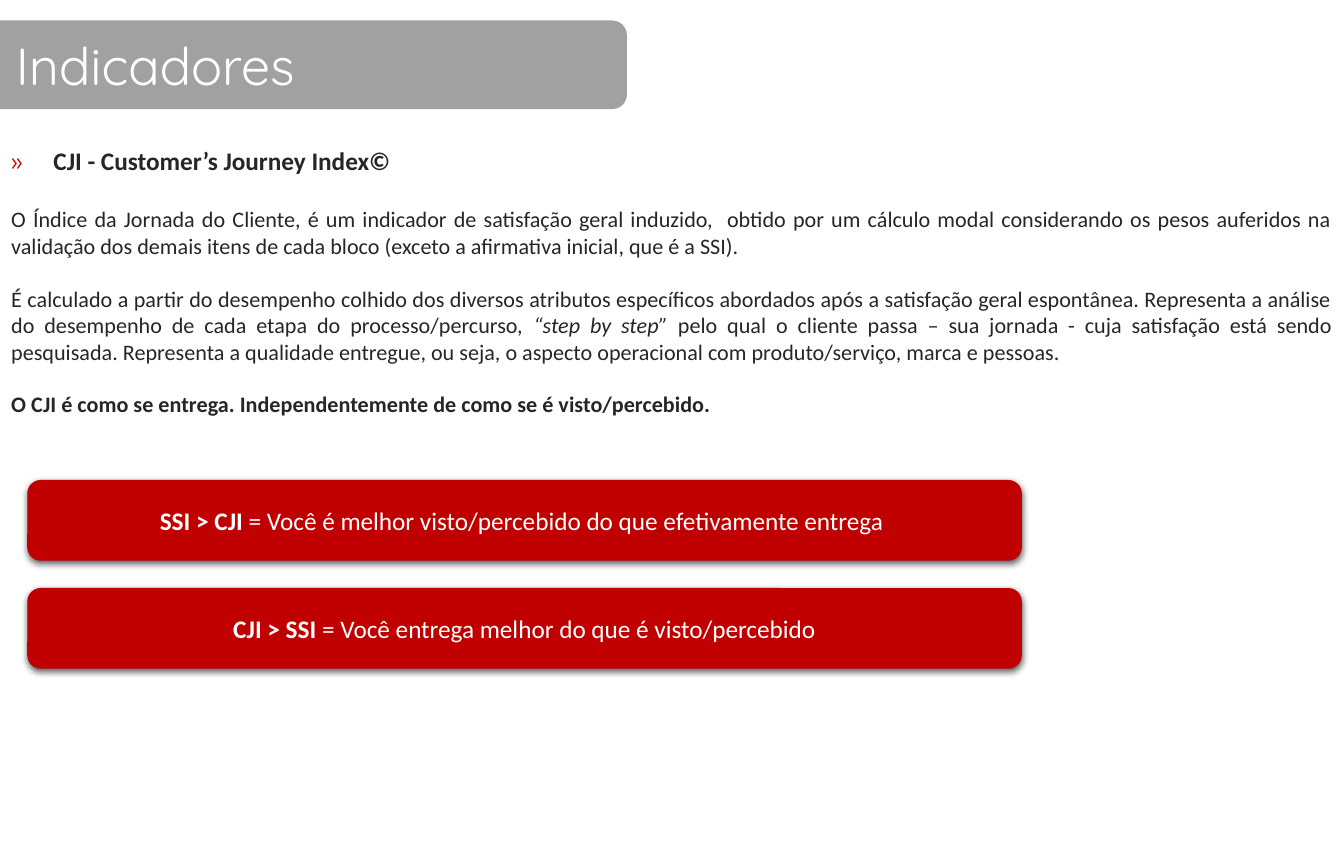
from lxml.etree import SubElement
from pptx import Presentation
from pptx.dml.color import RGBColor
from pptx.enum.shapes import MSO_SHAPE
from pptx.enum.text import MSO_ANCHOR, PP_ALIGN
from pptx.oxml.ns import qn
from pptx.util import Inches, Pt

COLORS = {"bar": "A1A1A1", "card": "C00000", "bullet": "CC0000",
          "text": "262626", "white": "FFFFFF", "shadow": "000000"}


def add_run(paragraph, text, size, color, font="Calibri", bold=False, italic=False):
    run = paragraph.add_run()
    run.text = text
    run.font.name = font
    run.font.size = Pt(size)
    run.font.bold = bold
    run.font.italic = italic
    run.font.color.rgb = RGBColor.from_string(COLORS[color])


def add_panel(left, top, width, height, color):
    panel = slide.shapes.add_shape(MSO_SHAPE.ROUNDED_RECTANGLE, Inches(left),
                                   Inches(top), Inches(width), Inches(height))
    panel.shadow.inherit = False
    panel.fill.solid()
    panel.fill.fore_color.rgb = RGBColor.from_string(COLORS[color])
    panel.line.fill.background()
    return panel


# Slide 30 cm wide
prs = Presentation()
prs.slide_width = Inches(30 / 2.54)
prs.slide_height = Inches(7.5)
slide = prs.slides.add_slide(prs.slide_layouts[5])

# Title on its grey bar, which bleeds off the left edge
title = slide.shapes.title
title_bar = add_panel(-0.24, 0.18, 5.75, 0.78, "bar")
title._element.addprevious(title_bar._element)
title.left, title.top = Inches(0), Inches(0.18)
title.width, title.height = Inches(5.36), Inches(0.78)
title.text_frame.margin_left = Inches(0.14)
title.text_frame.vertical_anchor = MSO_ANCHOR.MIDDLE
heading = title.text_frame.paragraphs[0]
heading.alignment = PP_ALIGN.LEFT
add_run(heading, "Indicadores", 33, "white", font="Quicksand")

# Explanation of the index: (space before, size, [(text, format)])
explanation = [
    (0, 16, [("CJI - Customer’s Journey Index©", {"bold": True})]),
    (19, 14, [("O Índice da Jornada do Cliente, é um indicador de satisfação geral "
               "induzido,  obtido por um cálculo modal considerando os pesos auferidos "
               "na validação dos demais itens de cada bloco (exceto a afirmativa "
               "inicial, que é a SSI). ", {})]),
    (16.5, 14, [("É calculado a partir do desempenho colhido dos diversos atributos "
                 "específicos abordados após a satisfação geral espontânea. Representa a "
                 "análise do desempenho de cada etapa do processo/percurso, ", {}),
                ("“step by step”", {"italic": True}),
                (" pelo qual o cliente passa – sua jornada - cuja satisfação está sendo "
                 "pesquisada. Representa a qualidade entregue, ou seja, o aspecto "
                 "operacional com produto/serviço, marca e pessoas. ", {})]),
    (16.5, 14, [("O CJI é como se entrega. Independentemente de como se é "
                 "visto/percebido.", {"bold": True})]),
]
body = slide.shapes.add_textbox(Inches(0), Inches(1.23), Inches(11.81), Inches(2.52)).text_frame
body.word_wrap = True
for index, (space, size, parts) in enumerate(explanation):
    paragraph = body.paragraphs[0] if index == 0 else body.add_paragraph()
    paragraph.alignment = PP_ALIGN.JUSTIFY
    paragraph.space_before = Pt(space)
    for text, style in parts:
        add_run(paragraph, text, size, "text", **style)

# Red bullet on the index name
index_name = body.paragraphs[0]._p.get_or_add_pPr()
index_name.set("marL", str(Inches(0.37)))
index_name.set("indent", str(Inches(-0.37)))
bullet_color = SubElement(index_name, qn("a:buClr"))
SubElement(bullet_color, qn("a:srgbClr"), val=COLORS["bullet"])
SubElement(index_name, qn("a:buFont"), typeface="Quicksand")
SubElement(index_name, qn("a:buChar"), char="»")

# Comparison cards with a soft shadow below
comparisons = [
    ("SSI > CJI ", "= Você é melhor visto/percebido do que efetivamente entrega "),
    ("CJI > SSI ", "= Você entrega melhor do que é visto/percebido"),
]
for row, (relation, meaning) in enumerate(comparisons):
    card = add_panel(0.24, 4.22 + row * 0.95, 8.74, 0.71, "card")
    effects = card._element.spPr.find(qn("a:effectLst"))
    shadow = SubElement(effects, qn("a:outerShdw"), blurRad=str(Pt(4.5)),
                        dist=str(Pt(1.5)), dir="5400000", rotWithShape="0")
    shadow_color = SubElement(shadow, qn("a:srgbClr"), val=COLORS["shadow"])
    SubElement(shadow_color, qn("a:alpha"), val="63000")
    card.text_frame.word_wrap = True
    card.text_frame.vertical_anchor = MSO_ANCHOR.MIDDLE
    line = card.text_frame.paragraphs[0]
    line.alignment = PP_ALIGN.CENTER
    add_run(line, relation, 16, "white", bold=True)
    add_run(line, meaning, 16, "white")

prs.save("out.pptx")
